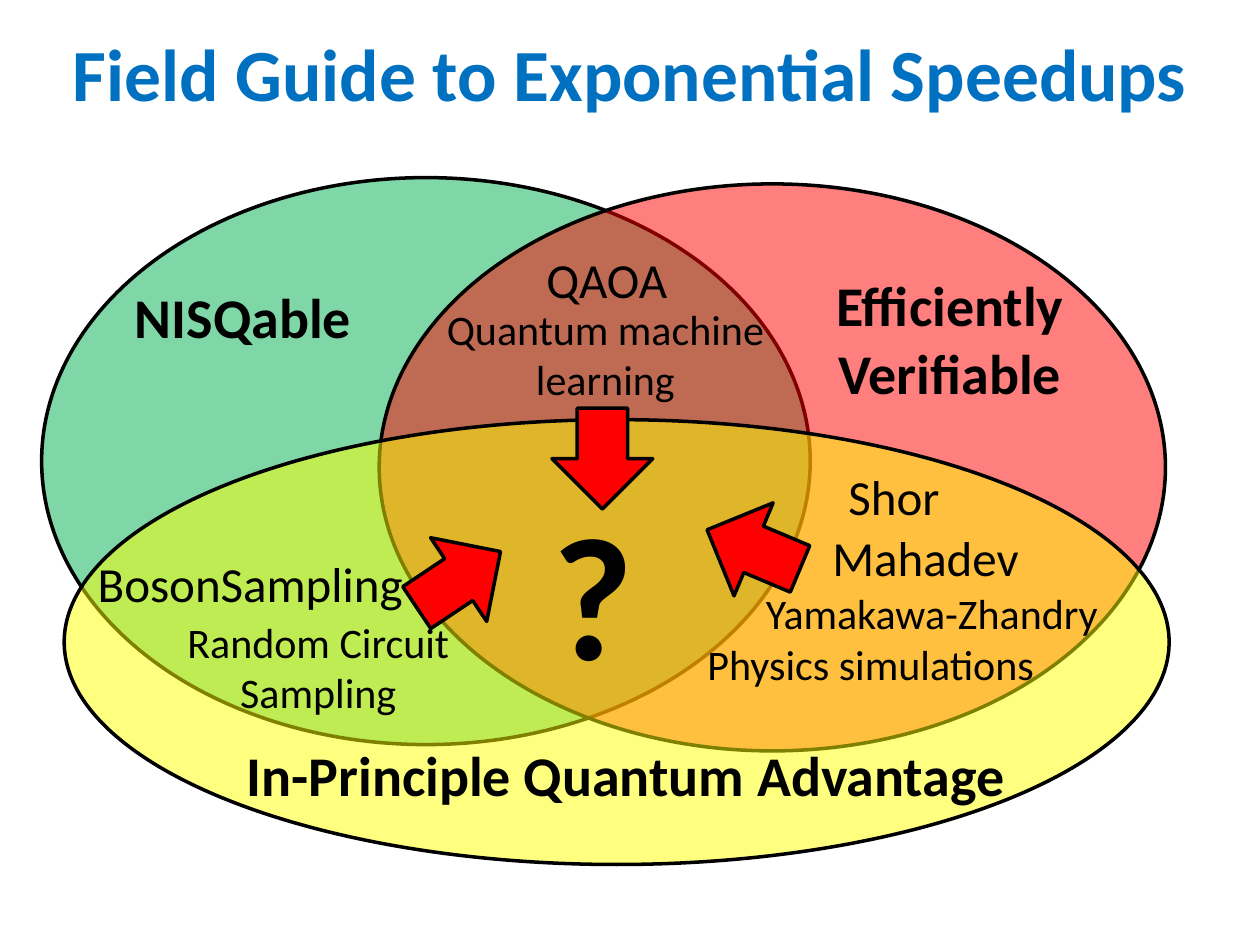
from lxml import etree
from pptx import Presentation
from pptx.dml.color import RGBColor
from pptx.enum.shapes import MSO_SHAPE as SHAPE
from pptx.enum.text import MSO_ANCHOR as ANCHOR, MSO_AUTO_SIZE as AUTO, PP_ALIGN as ALIGN
from pptx.oxml.ns import qn
from pptx.util import Pt


def color(hex_string):
    return RGBColor.from_string(hex_string)


class VennSlide:
    FONT = "Calibri"
    INK = "000000"
    TITLE = "0070C0"
    ARROW = "FF0000"
    OUTLINE = 2
    ARROW_SIZE = 57.6

    def __init__(self, prs):
        self.s = prs.slides.add_slide(prs.slide_layouts[5])

    def set_text(self, tf, text, size, bold, hex_color):
        tf.text = text
        tf.word_wrap = True
        for p in tf.paragraphs:
            p.alignment = ALIGN.CENTER
            p.font.name = self.FONT
            p.font.size = Pt(size)
            p.font.bold = bold
            p.font.color.rgb = color(hex_color)

    def title(self, text, x, y, w, h):
        sp = self.s.shapes.title
        sp.left, sp.top, sp.width, sp.height = Pt(x), Pt(y), Pt(w), Pt(h)
        self.set_text(sp.text_frame, text, 42, True, self.TITLE)
        sp.text_frame.vertical_anchor = ANCHOR.MIDDLE
        sp.text_frame.auto_size = AUTO.NONE

    def shape(self, kind, x, y, w, h, fill):
        sp = self.s.shapes.add_shape(kind, Pt(x), Pt(y), Pt(w), Pt(h))
        sp.shadow.inherit = False
        sp.fill.solid()
        sp.fill.fore_color.rgb = color(fill)
        sp.line.color.rgb = color(self.INK)
        sp.line.width = Pt(self.OUTLINE)
        return sp

    def region(self, x, y, w, h, fill):
        """Add a half-transparent ellipse."""
        sp = self.shape(SHAPE.OVAL, x, y, w, h, fill)
        clr = sp._element.spPr.find(qn("a:solidFill"))[0]
        etree.SubElement(clr, qn("a:alpha")).set("val", "50000")

    def label(self, text, x, y, w, size, bold=False, lines=1):
        h = lines * size * 1.2 + 7.2
        sp = self.s.shapes.add_textbox(Pt(x), Pt(y), Pt(w), Pt(h))
        self.set_text(sp.text_frame, text, size, bold, self.INK)
        sp.text_frame.auto_size = AUTO.SHAPE_TO_FIT_TEXT

    def arrow(self, x, y, angle):
        size = self.ARROW_SIZE
        self.shape(SHAPE.RIGHT_ARROW, x, y, size, size, self.ARROW).rotation = angle


def main():
    prs = Presentation()
    prs.slide_width, prs.slide_height = Pt(720), Pt(540)
    venn = VennSlide(prs)
    venn.title("Field Guide to Exponential Speedups", 26.6, 7.9, 666.7, 67)

    venn.region(23.8, 101.5, 439.2, 324, "00B050")
    venn.region(216.7, 105.1, 449.3, 324, "FF0000")
    venn.region(36.7, 239.8, 631.4, 254.2, "FFFF00")

    venn.label("NISQable", 28.8, 157.7, 220.3, 32, bold=True)
    venn.label("Efficiently\nVerifiable", 463.7, 151.2, 158.4, 32, bold=True, lines=2)
    venn.label("In-Principle Quantum Advantage", 133.2, 419.8, 449.3, 32, bold=True)

    venn.label("Mahadev", 456.5, 298.1, 144.7, 28)
    venn.label("Shor", 438.5, 262.8, 144.7, 28)
    venn.label("Physics simulations", 387.4, 361.4, 220.3, 24)
    venn.label("QAOA", 274.3, 139, 144.7, 28)
    venn.label("Quantum machine learning", 223.9, 169.9, 244.1, 24, lines=2)
    venn.label("BosonSampling", 42.5, 312.5, 200.9, 28)
    venn.label("Yamakawa-Zhandry", 410.4, 331.9, 244.1, 24)
    venn.label("Random Circuit Sampling", 81.4, 348.5, 200.9, 24, lines=2)
    venn.label("?", 210.2, 273.6, 257.8, 100, bold=True)

    venn.arrow(233.3, 302.4, 326.2)
    venn.arrow(401.8, 285.1, 202.8)
    venn.arrow(315.4, 233.3, 90)
    prs.save("out.pptx")


if __name__ == "__main__":
    main()
